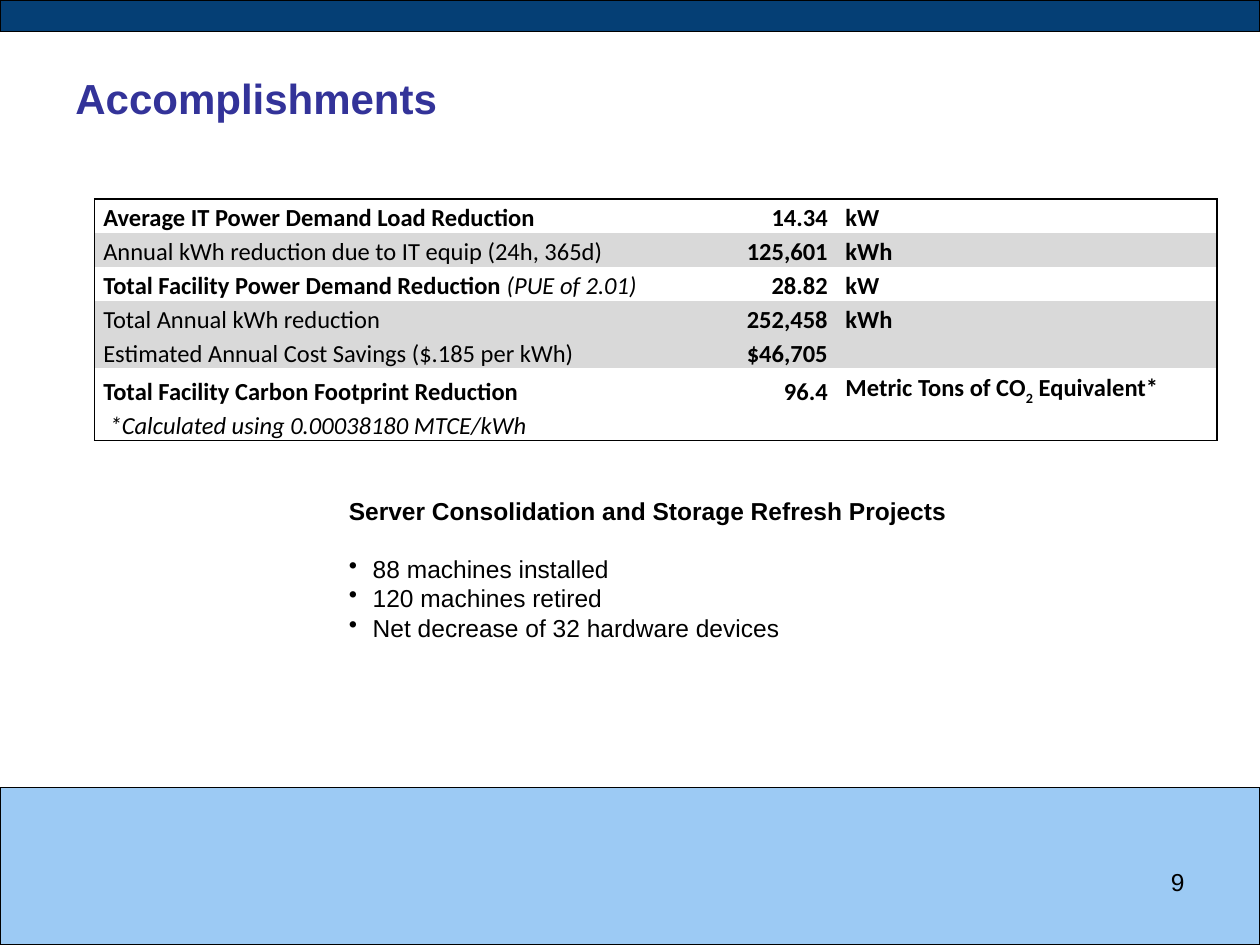
import pptx
import pptx.util
import pptx.dml.color
import pptx.enum.shapes
import pptx.enum.text
import pptx.oxml.ns
import lxml.etree

Inches, Pt = pptx.util.Inches, pptx.util.Pt
RGBColor = pptx.dml.color.RGBColor
Align = pptx.enum.text.PP_ALIGN
Anchor = pptx.enum.text.MSO_ANCHOR
qn = pptx.oxml.ns.qn

BLACK = RGBColor(0x00, 0x00, 0x00)
NAVY = RGBColor(0x05, 0x3F, 0x75)
SKY = RGBColor(0x9C, 0xCA, 0xF4)
INDIGO = RGBColor(0x33, 0x33, 0x99)
GREY = RGBColor(0xD9, 0xD9, 0xD9)

WIDTH, HEIGHT = 10, 7.5
BANDS = [(HEIGHT * 5 / 6, HEIGHT / 6, SKY), (0, HEIGHT / 30, NAVY)]
TITLE = "Accomplishments"
PAGE_NUMBER = "9"
PROJECTS = "Server Consolidation and Storage Refresh Projects"
RESULTS = ["88 machines installed", "120 machines retired",
           "Net decrease of 32 hardware devices"]

COLUMNS = [(4.88, Align.LEFT), (1.01, Align.RIGHT), (3.02, Align.LEFT)]
ROW_HEIGHT = 0.21
SHADED_ROWS = {1, 3, 4}
NOTE_ROW = 6
SAVINGS = [
    ([("Average IT Power Demand Load Reduction", "b")],
     [("14.34", "b")], [("kW", "b")]),
    ([("Annual kWh reduction due to IT equip (24h, 365d)", "")],
     [("125,601", "b")], [("kWh", "b")]),
    ([("Total Facility Power Demand Reduction ", "b"), ("(PUE of 2.01)", "i")],
     [("28.82", "b")], [("kW", "b")]),
    ([("Total Annual kWh reduction", "")],
     [("252,458", "b")], [("kWh", "b")]),
    ([("Estimated Annual Cost Savings ($.185 per kWh)", "")],
     [("$46,705", "b")], []),
    ([("Total Facility Carbon Footprint Reduction", "b")],
     [("96.4", "b")],
     [("Metric Tons of CO", "b"), ("2", "b sub"), (" Equivalent*", "b")]),
    ([("*Calculated using 0.00038180 MTCE/kWh", "i")], [], []),
]


def add_text(para, text, font="Arial", size=14, color=BLACK, style="",
             align=Align.LEFT):
    para.alignment = align
    span = para.add_run()
    span.text = text
    span.font.name = font
    span.font.size = Pt(size)
    span.font.color.rgb = color
    span.font.bold = "b" in style.split()
    span.font.italic = "i" in style.split()
    if "sub" in style.split():
        span.font._element.set("baseline", "-25000")


def add_box(page, left, top, width, height, anchor=Anchor.TOP):
    box = page.shapes.add_textbox(*map(Inches, (left, top, width, height)))
    box.text_frame.word_wrap = True
    box.text_frame.vertical_anchor = anchor
    return box.text_frame


def add_bullet(para):
    properties = para._p.get_or_add_pPr()
    properties.set("marL", str(Inches(0.19)))
    properties.set("indent", str(Inches(-0.19)))
    lxml.etree.SubElement(properties, qn("a:buChar")).set("char", "•")


def set_borders(cell, edges):
    properties = cell._tc.get_or_add_tcPr()
    for edge, visible in edges.items():
        line = lxml.etree.SubElement(properties, qn("a:" + edge))
        line.set("w", str(Pt(1)))
        if visible:
            fill = lxml.etree.SubElement(line, qn("a:solidFill"))
            lxml.etree.SubElement(fill, qn("a:srgbClr")).set("val", str(BLACK))
        else:
            lxml.etree.SubElement(line, qn("a:noFill"))


def fill_cell(cell, spans, align, shaded):
    cell.margin_left = cell.margin_right = Inches(0.07)
    cell.margin_top = cell.margin_bottom = 0
    cell.vertical_anchor = Anchor.BOTTOM
    if shaded:
        cell.fill.solid()
        cell.fill.fore_color.rgb = GREY
    else:
        cell.fill.background()
    para = cell.text_frame.paragraphs[0]
    para.line_spacing = 1.15
    para.space_after = Pt(10)
    for text, style in spans:
        add_text(para, text, font="Calibri", style=style, align=align)
    if not spans:
        end = lxml.etree.SubElement(para._p, qn("a:endParaRPr"))
        end.set("sz", "1400")


def add_savings_table(page):
    width = sum(column[0] for column in COLUMNS)
    last_row, last_column = len(SAVINGS) - 1, len(COLUMNS) - 1
    table = page.shapes.add_table(
        len(SAVINGS), len(COLUMNS), Inches(0.75), Inches(1.58),
        Inches(width), Inches(ROW_HEIGHT * len(SAVINGS))).table
    table.first_row = table.horz_banding = False
    for c, (column_width, _) in enumerate(COLUMNS):
        table.columns[c].width = Inches(column_width)
    for r, row in enumerate(SAVINGS):
        table.rows[r].height = Inches(ROW_HEIGHT)
        for c, spans in enumerate(row):
            cell = table.cell(r, c)
            set_borders(cell, {"lnL": c == 0, "lnR": c == last_column,
                               "lnT": r == 0, "lnB": r == last_row})
            fill_cell(cell, spans, COLUMNS[c][1], r in SHADED_ROWS)
    table.cell(NOTE_ROW, 0).margin_left = Inches(0.12)


def main():
    deck = pptx.Presentation()
    deck.slide_width, deck.slide_height = Inches(WIDTH), Inches(HEIGHT)
    page = deck.slides.add_slide(deck.slide_layouts[6])

    for top, height, color in BANDS:
        band = page.shapes.add_shape(
            pptx.enum.shapes.MSO_SHAPE.RECTANGLE,
            0, Inches(top), Inches(WIDTH), Inches(height))
        band.shadow.inherit = False
        band.fill.solid()
        band.fill.fore_color.rgb = color
        band.line.color.rgb = BLACK
        band.line.width = Pt(0.75)

    title = add_box(page, 0.5, 0.3, 9, 0.95, anchor=Anchor.MIDDLE)
    add_text(title.paragraphs[0], TITLE, size=24, color=INDIGO, style="b")
    number = add_box(page, 7.17, 6.83, 2.33, 0.52)
    add_text(number.paragraphs[0], PAGE_NUMBER, align=Align.RIGHT)

    add_savings_table(page)

    projects = add_box(page, 2.67, 3.89, 5, 1.28)
    add_text(projects.paragraphs[0], PROJECTS, style="b")
    projects.paragraphs[0].space_after = Pt(16)
    for result in RESULTS:
        para = projects.add_paragraph()
        add_bullet(para)
        add_text(para, result)

    deck.save("out.pptx")


if __name__ == "__main__":
    main()
